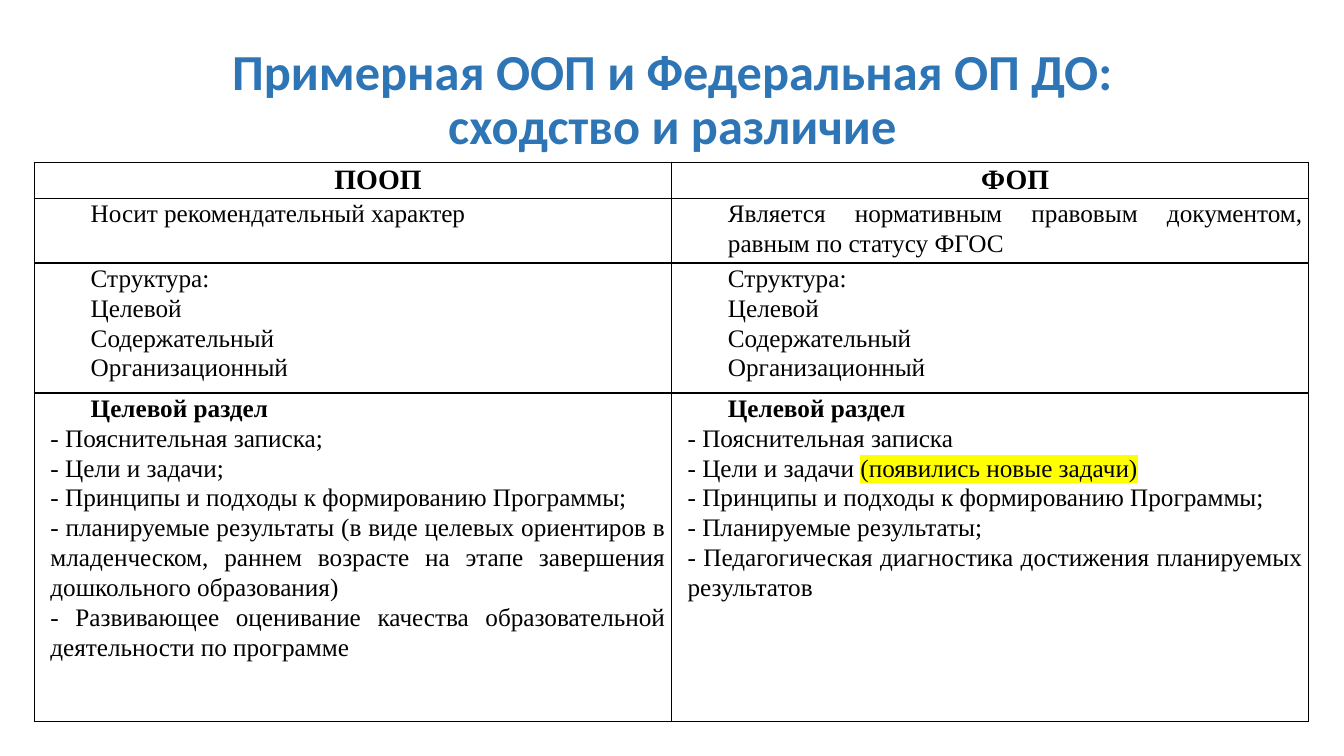
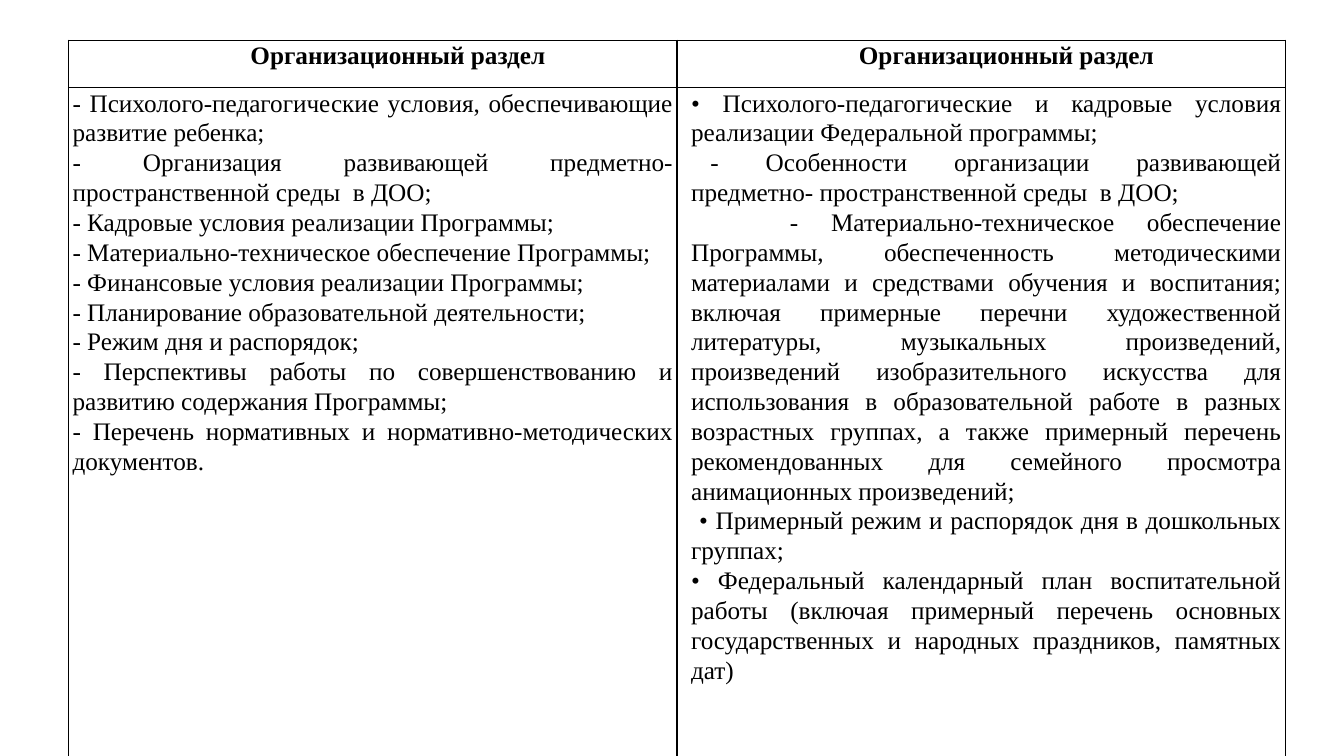
from lxml.etree import SubElement
from pptx import Presentation
from pptx.dml.color import RGBColor
from pptx.enum.text import MSO_ANCHOR as Anchor, PP_ALIGN as Align
from pptx.oxml.ns import qn
from pptx.util import Inches, Pt

COLOURS = {"title": "2E75B6", "ink": "000000", "paper": "FFFFFF", "marker": "FFFF00"}
TITLE_FONT = "Calibri"
BODY_FONT = "Times New Roman"


def solid_fill(parent, colour, tag="a:solidFill"):
    fill = SubElement(parent, qn(tag))
    SubElement(fill, qn("a:srgbClr"), val=COLOURS[colour])
    return fill


def write(paragraph, text, size=18, bold=False, colour="ink", font=BODY_FONT, highlight=None):
    run = paragraph.add_run()
    run.text = text
    run.font.size = Pt(size)
    run.font.bold = bold
    run.font.color.rgb = RGBColor.from_string(COLOURS[colour])
    if highlight:
        properties = run.font._element
        marker = solid_fill(properties, highlight, "a:highlight")
        properties.find(qn("a:solidFill")).addnext(marker)
    run.font.name = font


def line(text, left=0.1, first=0, align=Align.JUSTIFY, marked=None, **style):
    return {"text": text, "left": left, "first": first, "align": align,
            "marked": marked, "style": style}


def heading(text, size=18):
    return [line(text, left=0.5, align=Align.CENTER, size=size, bold=True)]


def lines(*texts, left=0.1):
    return [line(text, left=left) for text in texts]


class Deck:
    """Holds the shared style and the current slide, and adds elements to it."""

    def __init__(self):
        self.presentation = Presentation()
        self.presentation.slide_width = Inches(13.33)
        self.presentation.slide_height = Inches(7.5)
        self.slide = None

    def add_slide(self):
        blank = self.presentation.slide_layouts[6]
        self.slide = self.presentation.slides.add_slide(blank)
        background = self.slide.background.fill
        background.solid()
        background.fore_color.rgb = RGBColor.from_string(COLOURS["paper"])

    def add_title(self, *rows):
        box = self.slide.shapes.add_textbox(
            Inches(0.92), Inches(0.4), Inches(11.5), Inches(1.21))
        frame = box.text_frame
        frame.word_wrap = True
        frame.vertical_anchor = Anchor.MIDDLE
        paragraph = frame.paragraphs[0]
        paragraph.alignment = Align.CENTER
        paragraph.line_spacing = 0.9
        for index, row in enumerate(rows):
            if index:
                paragraph.add_line_break()
            write(paragraph, row, size=36, bold=True, colour="title", font=TITLE_FONT)

    def add_table(self, left, top, width, heights, margin, rows):
        columns = len(rows[0])
        table = self.slide.shapes.add_table(
            len(rows), columns, Inches(left), Inches(top),
            Inches(width), Inches(sum(heights))).table
        table.first_row = table.horz_banding = False
        for column in table.columns:
            column.width = Inches(width / columns)
        for table_row, height, contents in zip(table.rows, heights, rows):
            table_row.height = Inches(height)
            for cell, content in zip(table_row.cells, contents):
                self.fill_cell(cell, content, margin)

    def fill_cell(self, cell, content, margin):
        cell.margin_left = cell.margin_right = Inches(margin)
        cell.margin_top = cell.margin_bottom = 0
        for side in "LRTB":
            border = SubElement(cell._tc.get_or_add_tcPr(), qn(f"a:ln{side}"), w=str(Pt(1)))
            solid_fill(border, "ink")
        cell.fill.solid()
        cell.fill.fore_color.rgb = RGBColor.from_string(COLOURS["paper"])
        frame = cell.text_frame
        for index, item in enumerate(content):
            paragraph = frame.add_paragraph() if index else frame.paragraphs[0]
            paragraph.alignment = item["align"]
            paragraph.line_spacing = 1.07
            properties = paragraph._p.get_or_add_pPr()
            properties.set("marL", str(Inches(item["left"])))
            properties.set("indent", str(Inches(item["first"])))
            write(paragraph, item["text"], **item["style"])
            if item["marked"]:
                write(paragraph, item["marked"], highlight="marker", **item["style"])


def add_comparison(deck):
    structure = lines("Структура:", "Целевой", "Содержательный", "Организационный", left=0.5)
    section = line("Целевой раздел", left=0.5, bold=True)
    principles = "- Принципы и подходы к формированию Программы;"
    model_goals = [section] + lines(
        "- Пояснительная записка;",
        "- Цели и задачи;",
        principles,
        "- планируемые результаты (в виде целевых ориентиров в младенческом, "
        "раннем возрасте на этапе завершения дошкольного образования)",
        "- Развивающее оценивание качества образовательной деятельности по программе")
    federal_goals = [
        section,
        line("- Пояснительная записка"),
        line("- Цели и задачи ", marked="(появились новые задачи)"),
    ] + lines(
        principles,
        "- Планируемые результаты;",
        "- Педагогическая диагностика достижения планируемых результатов")
    deck.add_slide()
    deck.add_title("Примерная ООП и Федеральная ОП ДО:", "сходство и различие")
    deck.add_table(0.34, 1.61, 12.64, [0.31, 0.63, 1.29, 3.26], 0.06, [
        [heading("ПООП", 20), heading("ФОП", 20)],
        [lines("Носит рекомендательный характер", left=0.5),
         lines("Является нормативным правовым документом, равным по статусу ФГОС", left=0.5)],
        [structure, structure],
        [model_goals, federal_goals],
    ])


def add_organisation(deck):
    model_conditions = lines(
        "- Психолого-педагогические условия, обеспечивающие развитие ребенка;",
        "- Организация развивающей предметно- пространственной среды  в ДОО;",
        "- Кадровые условия реализации Программы;",
        "- Материально-техническое обеспечение Программы;",
        "- Финансовые условия реализации Программы;",
        "- Планирование образовательной деятельности;",
        "- Режим дня и распорядок;",
        "- Перспективы работы по совершенствованию и развитию содержания Программы;",
        "- Перечень нормативных и нормативно-методических документов.",
        left=0)
    federal_conditions = [
        line("• Психолого-педагогические и кадровые условия реализации Федеральной программы;"),
        line("- Особенности организации развивающей предметно- пространственной среды  в ДОО;",
             first=0.19),
        line("- Материально-техническое обеспечение Программы, обеспеченность методическими "
             "материалами и средствами обучения и воспитания; включая примерные перечни "
             "художественной литературы, музыкальных произведений, произведений "
             "изобразительного искусства для использования в образовательной работе в разных "
             "возрастных группах, а также примерный перечень рекомендованных для семейного "
             "просмотра анимационных произведений;", first=0.98),
        line("• Примерный режим и распорядок дня в дошкольных группах;", first=0.08),
        line("• Федеральный календарный план воспитательной работы (включая примерный перечень "
             "основных государственных и народных праздников, памятных дат)"),
    ]
    deck.add_slide()
    deck.add_table(0.68, 0.4, 12.07, [0.47, 6.71], 0.04, [
        [heading("Организационный раздел")] * 2,
        [model_conditions, federal_conditions],
    ])


def main():
    deck = Deck()
    add_comparison(deck)
    add_organisation(deck)
    deck.presentation.save("out.pptx")


if __name__ == "__main__":
    main()
